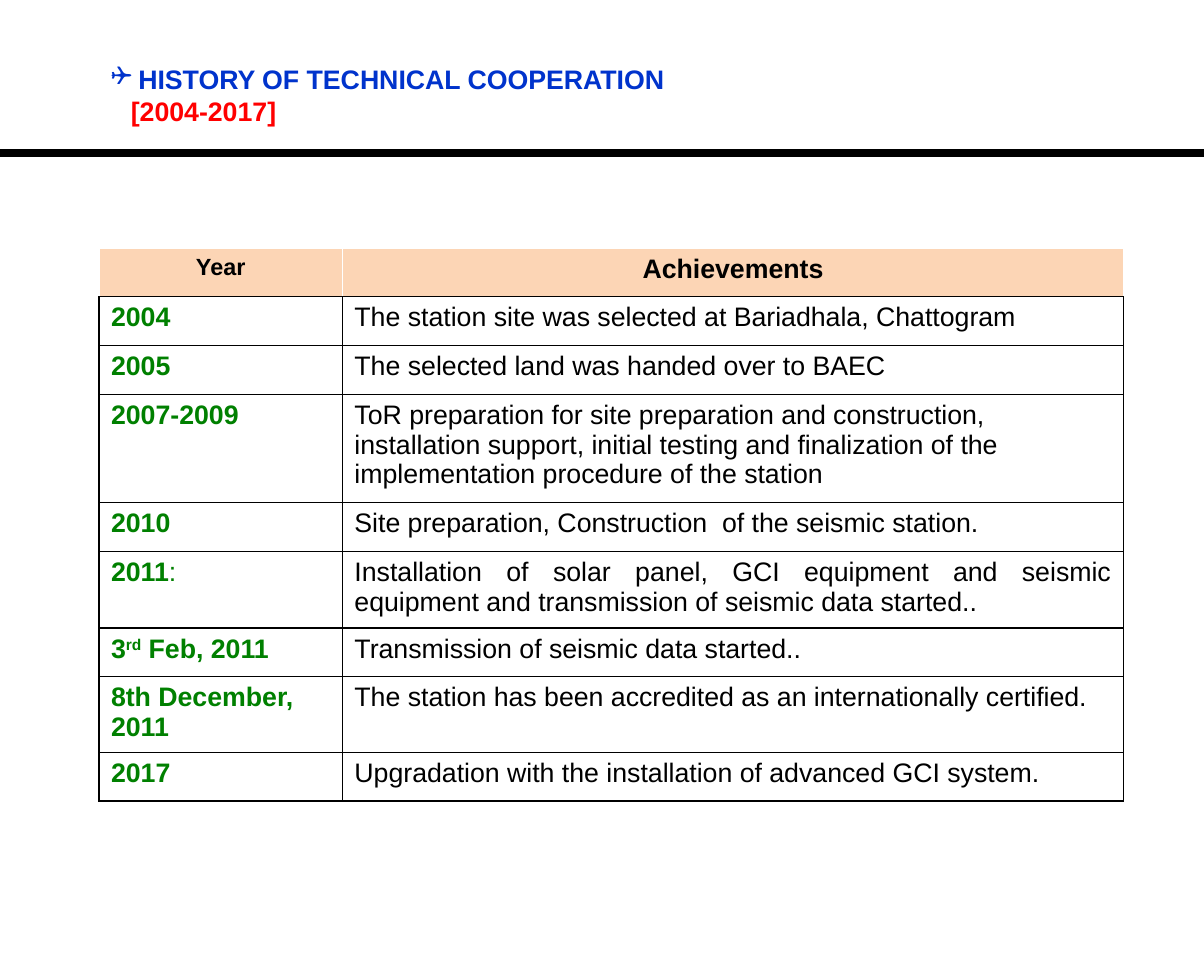
from dataclasses import dataclass

from lxml.etree import SubElement
from pptx import Presentation
from pptx.dml.color import RGBColor
from pptx.enum.shapes import MSO_CONNECTOR as Connector
from pptx.enum.text import PP_ALIGN as Align
from pptx.oxml.ns import qn
from pptx.util import Pt

BLACK = RGBColor(0x00, 0x00, 0x00)
WHITE = RGBColor(0xFF, 0xFF, 0xFF)
PEACH = RGBColor(0xFC, 0xD5, 0xB5)
GREEN = RGBColor(0x00, 0x80, 0x00)
BLUE = RGBColor(0x00, 0x33, 0xCC)
RED = RGBColor(0xFF, 0x00, 0x00)

FONT = "Arial"
LEFT = 59.2
YEAR_WIDTH = 145.6
ACHIEVEMENT_WIDTH = 467.2
ROW_HEIGHT = 29.2
TWO_LINES = 45.7
THREE_LINES = 64.7


@dataclass(frozen=True)
class Piece:
    text: str
    color: RGBColor = BLACK
    bold: bool = False
    size: float = 16
    baseline: int = 0


@dataclass(frozen=True)
class Entry:
    year: tuple[Piece, ...]
    achievement: Piece
    align: Align = Align.LEFT
    height: float = ROW_HEIGHT
    heading: bool = False


def green(text: str, bold: bool = True, baseline: int = 0) -> Piece:
    return Piece(text, GREEN, bold, baseline=baseline)


HISTORY = (
    Entry((Piece("Year", bold=True, size=14),), Piece("Achievements", bold=True),
          Align.CENTER, heading=True),
    Entry((green("2004"),),
          Piece("The station site was selected at Bariadhala, Chattogram")),
    Entry((green("2005"),), Piece("The selected land was handed over to BAEC")),
    Entry((green("2007-2009"),),
          Piece("ToR preparation for site preparation and construction, "
                "installation support, initial testing and finalization of the "
                "implementation procedure of the station"),
          height=THREE_LINES),
    Entry((green("2010"),),
          Piece("Site preparation, Construction  of the seismic station.")),
    Entry((green("2011"), green(":", bold=False)),
          Piece("Installation of solar panel, GCI equipment and seismic "
                "equipment and transmission of seismic data started.."),
          Align.JUSTIFY, TWO_LINES),
    Entry((green("3"), green("rd", baseline=30000), green(" Feb, 2011")),
          Piece("Transmission of seismic data started.."), Align.JUSTIFY),
    Entry((green("8th December, 2011"),),
          Piece("The station has been accredited as an internationally certified."),
          Align.JUSTIFY, TWO_LINES),
)
UPGRADE = (
    Entry((green("2017"),),
          Piece("Upgradation with the installation of advanced GCI system."),
          Align.JUSTIFY),
)


def add_piece(paragraph, piece: Piece) -> None:
    run = paragraph.add_run()
    run.text = piece.text
    run.font.name = FONT
    run.font.size = Pt(piece.size)
    run.font.bold = piece.bold
    run.font.color.rgb = piece.color
    if piece.baseline:
        run.font._element.set("baseline", str(piece.baseline))


def add_borders(cell, sides: RGBColor, top: RGBColor) -> None:
    properties = cell._tc.get_or_add_tcPr()
    for tag, color in (("a:lnL", sides), ("a:lnR", sides),
                       ("a:lnT", top), ("a:lnB", BLACK)):
        border = SubElement(properties, qn(tag), w=str(Pt(1)))
        solid = SubElement(border, qn("a:solidFill"))
        SubElement(solid, qn("a:srgbClr"), val=str(color))


def fill_cell(cell, pieces: tuple[Piece, ...], align: Align, heading: bool) -> None:
    edge = WHITE if heading else BLACK
    add_borders(cell, edge, edge)
    cell.fill.solid()
    cell.fill.fore_color.rgb = PEACH if heading else WHITE
    paragraph = cell.text_frame.paragraphs[0]
    paragraph.alignment = align
    for piece in pieces:
        add_piece(paragraph, piece)


def add_history(slide, top: float, entries: tuple[Entry, ...]) -> None:
    height = sum(entry.height for entry in entries)
    history = slide.shapes.add_table(
        len(entries), 2, Pt(LEFT), Pt(top),
        Pt(YEAR_WIDTH + ACHIEVEMENT_WIDTH), Pt(height)).table
    history.columns[0].width = Pt(YEAR_WIDTH)
    history.columns[1].width = Pt(ACHIEVEMENT_WIDTH)
    history.first_row = entries[0].heading
    history.horz_banding = False
    for index, entry in enumerate(entries):
        history.rows[index].height = Pt(entry.height)
        year_align = Align.CENTER if entry.heading else Align.LEFT
        fill_cell(history.cell(index, 0), entry.year, year_align, entry.heading)
        fill_cell(history.cell(index, 1), (entry.achievement,),
                  entry.align, entry.heading)


def add_rule(slide) -> None:
    rule = slide.shapes.add_connector(
        Connector.STRAIGHT, Pt(0), Pt(91.5), Pt(720), Pt(91.5))
    rule.line.color.rgb = BLACK
    rule.line.width = Pt(4.5)
    SubElement(rule._element.spPr, qn("a:effectLst"))


def add_title(slide) -> None:
    frame = slide.shapes.add_textbox(Pt(LEFT), Pt(33.8), Pt(450.7), Pt(65.5)).text_frame
    frame.word_wrap = True
    topic = frame.paragraphs[0]
    properties = topic._p.get_or_add_pPr()
    properties.set("marL", str(Pt(16.5)))
    properties.set("indent", str(-Pt(16.5)))
    SubElement(properties, qn("a:buFont"), typeface="Wingdings")
    SubElement(properties, qn("a:buChar"), char="❑")
    add_piece(topic, Piece("HISTORY OF TECHNICAL COOPERATION", BLUE, True))
    period = frame.add_paragraph()
    period._p.get_or_add_pPr().set("marL", str(Pt(12)))
    add_piece(period, Piece("[2004-2017]", RED, True))


def main() -> None:
    deck = Presentation()
    deck.slide_width = Pt(720)
    deck.slide_height = Pt(576)
    slide = deck.slides.add_slide(deck.slide_layouts[6])
    add_rule(slide)
    add_title(slide)
    add_history(slide, 148.3, HISTORY)
    add_history(slide, 450, UPGRADE)
    deck.save("out.pptx")


if __name__ == "__main__":
    main()
